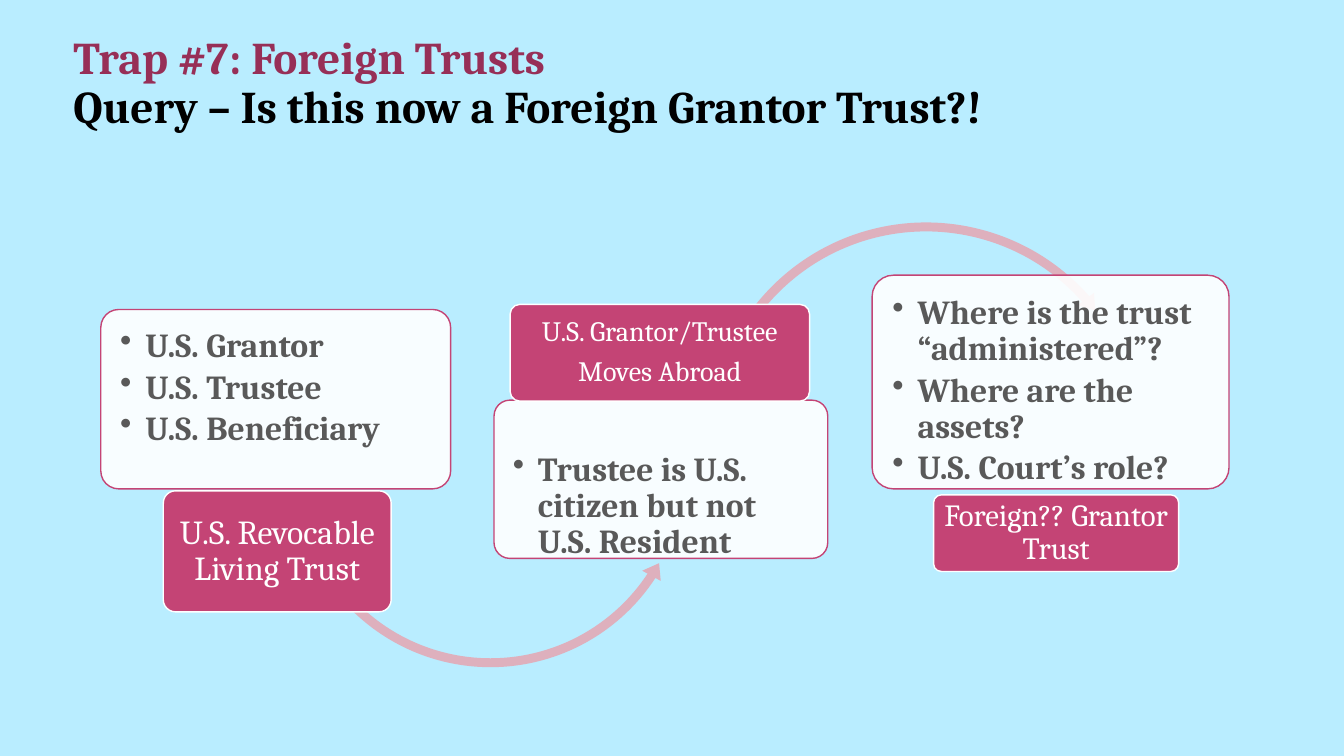
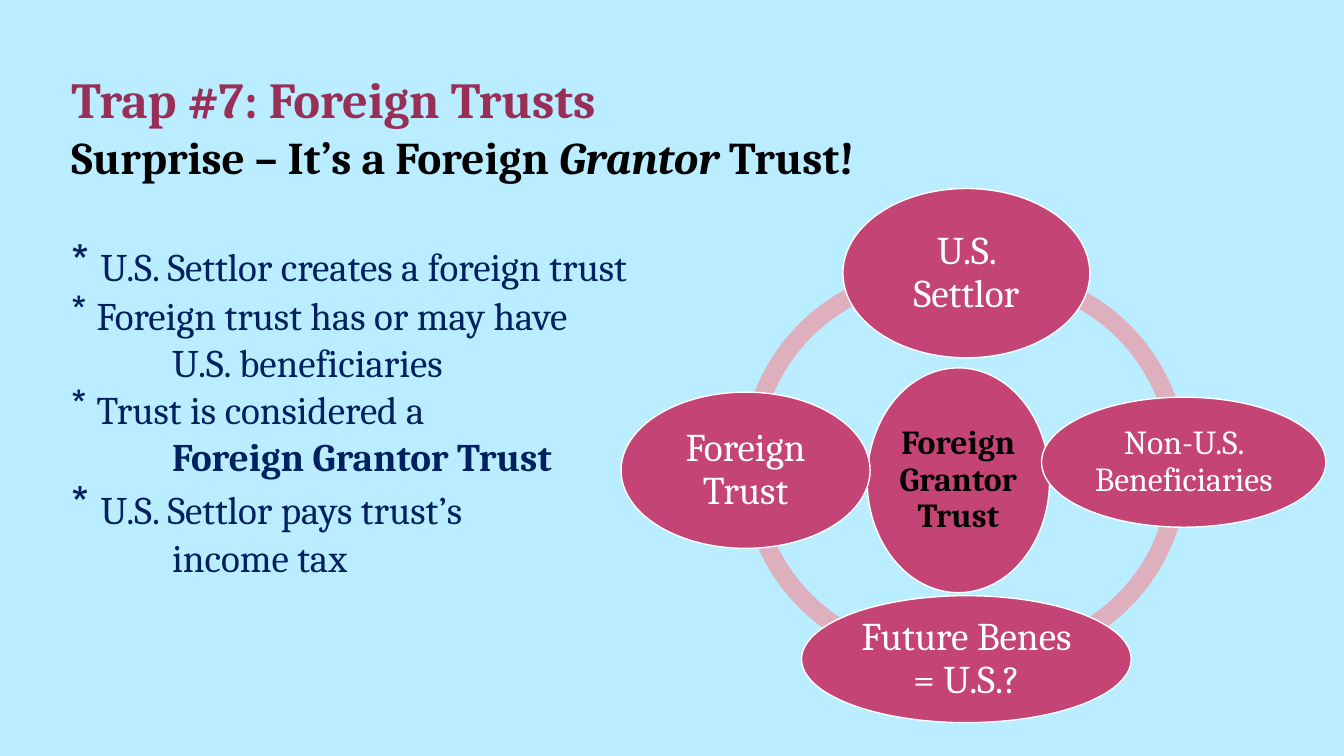
"""Build two slides on foreign trusts: a three-stage flow and a ring of parties."""
from lxml import etree
from pptx import Presentation
from pptx.dml.color import RGBColor
from pptx.enum.shapes import MSO_SHAPE
from pptx.enum.text import MSO_ANCHOR, PP_ALIGN
from pptx.oxml.ns import qn
from pptx.util import Inches, Pt

ROUNDED = MSO_SHAPE.ROUNDED_RECTANGLE
OVAL = MSO_SHAPE.OVAL
ARC = MSO_SHAPE.BLOCK_ARC
LEFT_ARROW = MSO_SHAPE.LEFT_CIRCULAR_ARROW
RIGHT_ARROW = MSO_SHAPE.CIRCULAR_ARROW
TOP, MIDDLE = MSO_ANCHOR.TOP, MSO_ANCHOR.MIDDLE
LEFT, CENTER = PP_ALIGN.LEFT, PP_ALIGN.CENTER

FONT = "Cambria"
SKY, PLUM, ROSE, PINK = "B9EDFF", "972F57", "C44475", "DEB0BD"
WHITE, BLACK, GRAY, NAVY = "FFFFFF", "000000", "595959", "002060"


def paint(fill, color, opacity=100):
    """Make a fill solid in a hex colour, with an opacity in percent."""
    fill.solid()
    fill.fore_color.rgb = RGBColor.from_string(color)
    if opacity < 100:
        for node in fill._xPr.iter(qn("a:srgbClr")):
            etree.SubElement(node, qn("a:alpha"), val=str(opacity * 1000))


def write(frame, text, size, color, bold=False, italic_word="", align=LEFT, spacing=1.0,
          before=0, after=0, margin=0, bullet="", bullet_percent=100):
    """Add one formatted paragraph to a text frame."""
    paragraph = frame.paragraphs[0]
    if paragraph.runs:
        paragraph = frame.add_paragraph()
    properties = paragraph._p.get_or_add_pPr()
    properties.set("marL", str(Inches(margin)))
    properties.set("indent", str(-Inches(margin) if bullet else 0))
    if bullet:
        etree.SubElement(properties, qn("a:buSzPct"), val=str(bullet_percent * 1000))
        etree.SubElement(properties, qn("a:buChar"), char=bullet)
    paragraph.alignment = align
    paragraph.line_spacing = spacing
    paragraph.space_before = Pt(before)
    paragraph.space_after = Pt(after)
    for piece in text.partition(italic_word) if italic_word else [text]:
        run = paragraph.add_run()
        run.text = piece
        run.font.name = FONT
        run.font.size = Pt(size)
        run.font.bold = bold
        run.font.italic = bool(italic_word) and piece == italic_word
        paint(run.font.fill, color)


presentation = Presentation()
presentation.slide_width = Inches(13.33)
presentation.slide_height = Inches(7.5)

titles = [
    (0.63, 0.3, 32.4, 0.9, "Query – Is this now a Foreign Grantor Trust?!", ""),
    (0.61, 0.63, 36, 1.0, "Surprise – It’s a Foreign Grantor Trust!", "Grantor"),
]
for left, top, size, spacing, subtitle, italic_word in titles:
    slide = presentation.slides.add_slide(presentation.slide_layouts[6])
    paint(slide.background.fill, SKY)
    box = slide.shapes.add_textbox(Inches(left), Inches(top), Inches(11), Inches(1.2))
    box.text_frame.word_wrap = True
    write(box.text_frame, "Trap #7: Foreign Trusts", size, PLUM, bold=True, spacing=spacing)
    write(box.text_frame, subtitle, 32.4, BLACK, bold=True, italic_word=italic_word,
          spacing=spacing)
flow_slide, ring_slide = presentation.slides

facts = [
    ("U.S. Settlor creates a foreign trust", dict(bullet="*", margin=0.29, bullet_percent=116, after=1.5)),
    ("Foreign trust has or may have", dict(bullet="*", margin=0.25)),
    ("U.S. beneficiaries", dict(margin=1)),
    ("Trust is considered a", dict(bullet="*", margin=0.25)),
    ("Foreign Grantor Trust", dict(margin=1, bold=True)),
    ("U.S. Settlor pays trust’s",
     dict(bullet="*", margin=0.29, bullet_percent=116, before=4.5, after=1)),
    ("income tax", dict(margin=1)),
]
box = ring_slide.shapes.add_textbox(Inches(0.61), Inches(2.36), Inches(6), Inches(3.5))
box.text_frame.word_wrap = True
for text, style in facts:
    write(box.text_frame, text, 27.9, NAVY, **style)

panel = dict(color=GRAY, bold=True, spacing=0.9, margin=0.25, bullet="•")
label = dict(color=WHITE, align=CENTER, spacing=0.9)
hub = dict(label, color=BLACK, bold=True)

flow = [
    (ROUNDED, (1, 3.07, 3.47, 1.78), [0.1], panel, 24,
     ["U.S. Grantor", "U.S. Trustee", "U.S. Beneficiary"]),
    (LEFT_ARROW, (2.85, 2.65, 4.03, 4.03), [0.022, 2.636, 19.962, 89.816, 0.026], None, 0, []),
    (ROUNDED, (1.62, 4.87, 2.26, 1.2), [0.1], label, 24, ["U.S. Revocable Living Trust"]),
    (ROUNDED, (4.9, 3.97, 3.31, 1.57), [0.1], panel, 24,
     ["Trustee is U.S. citizen but not U.S. Resident"]),
    (RIGHT_ARROW, (6.97, 2.15, 4.43, 4.43), [0.02, 2.391, 191.159, 121.06, 0.023], None, 0, []),
    (ROUNDED, (5.06, 3.02, 2.97, 0.96), [0.1], label, 20,
     ["U.S. Grantor/Trustee", "Moves Abroad"]),
    (ROUNDED, (8.65, 2.73, 3.54, 2.12), [0.1], panel, 24,
     ["Where is the trust “administered”?", "Where are the assets?", "U.S. Court’s role?"]),
    (ROUNDED, (9.26, 4.91, 2.43, 0.76), [0.1], label, 22, ["Foreign?? Grantor Trust"]),
]
ring = [
    (ARC, (7.35, 2.64, 3.92, 3.92), [106.923, 166.925, 0.046], None, 0, []),
    (ARC, (7.35, 2.68, 3.92, 3.92), [49.09, 107.625, 0.046], None, 0, []),
    (ARC, (7.86, 2.68, 3.92, 3.92), [215.001, 58.343, 0.046], None, 0, []),
    (ARC, (7.86, 2.65, 3.92, 3.92), [157.669, 215.548, 0.046], None, 0, []),
    (OVAL, (8.6, 3.65, 1.81, 2.23), [], hub, 24, ["Foreign Grantor Trust"]),
    (OVAL, (8.36, 1.87, 2.45, 1.68), [], label, 28, ["U.S. Settlor"]),
    (OVAL, (10.33, 3.94, 2.82, 1.29), [], label, 24, ["Non-U.S. Beneficiaries"]),
    (OVAL, (7.95, 5.91, 3.27, 1.26), [], label, 28, ["Future Benes = U.S.?"]),
    (OVAL, (6.16, 3.89, 2.47, 1.55), [], label, 28, ["Foreign Trust"]),
]
for slide, parts in ((flow_slide, flow), (ring_slide, ring)):
    for kind, place, adjustments, style, size, lines in parts:
        shape = slide.shapes.add_shape(kind, *[Inches(length) for length in place])
        shape.shadow.inherit = False
        for index, value in enumerate(adjustments):
            shape.adjustments[index] = value
        if style is None:
            paint(shape.fill, PINK)
            shape.line.fill.background()
            continue
        is_panel = style is panel
        paint(shape.fill, WHITE if is_panel else ROSE, 90 if is_panel else 100)
        paint(shape.line.fill, ROSE if is_panel else WHITE)
        shape.line.width = Pt(1)
        frame = shape.text_frame
        frame.word_wrap = True
        frame.vertical_anchor = TOP if is_panel else MIDDLE
        inset = Inches(0.14 if is_panel else 0.04)
        frame.margin_left = frame.margin_right = frame.margin_top = inset
        frame.margin_bottom = 0 if is_panel else inset
        if is_panel and len(lines) == 1:
            frame.margin_top = Inches(0.47)
        for line in lines:
            write(frame, line, size, after=size * (0.15 if is_panel else 0.35), **style)

presentation.save("out.pptx")
